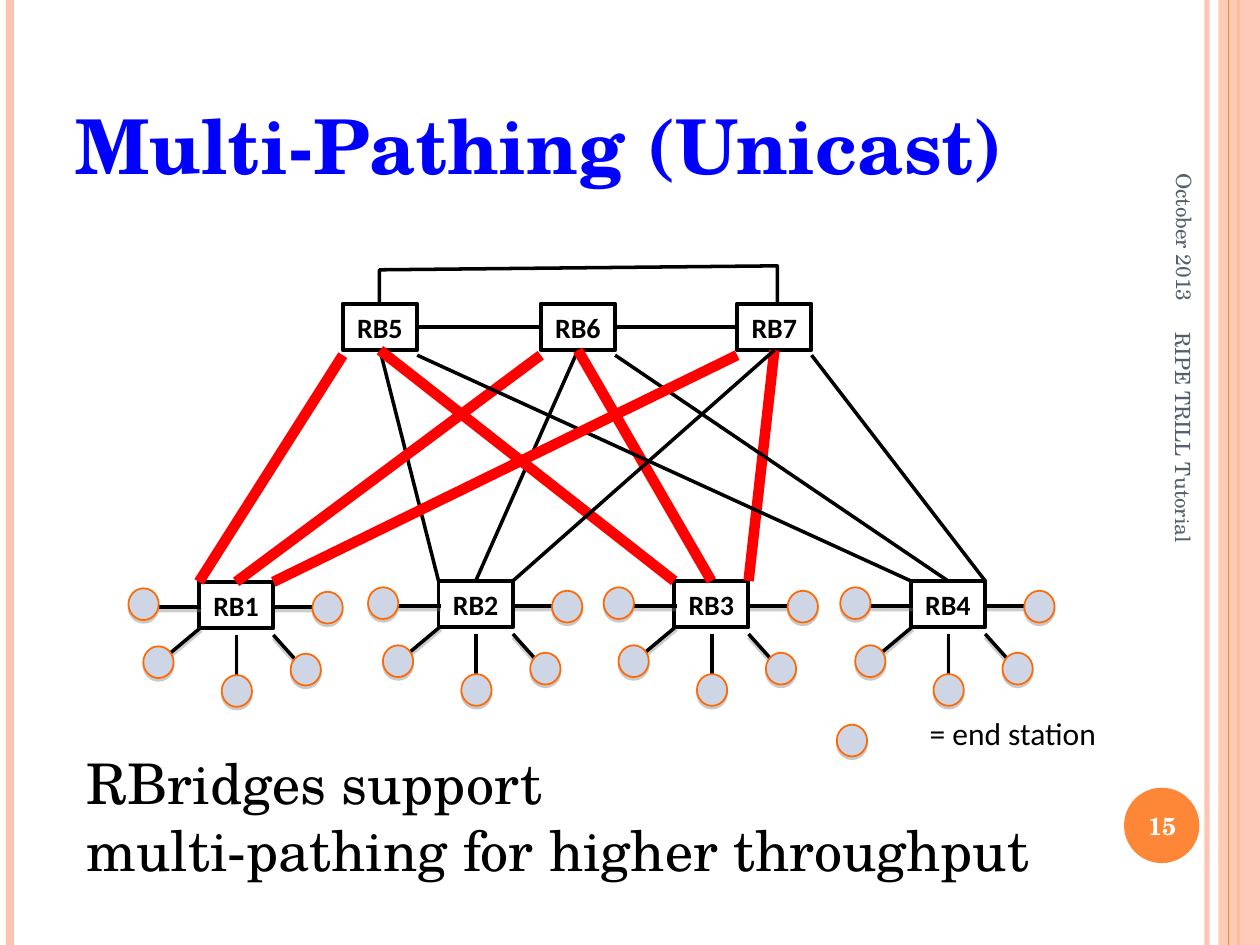
from dataclasses import dataclass

from lxml import etree
from pptx import Presentation
from pptx.dml.color import RGBColor
from pptx.enum.shapes import MSO_CONNECTOR, MSO_SHAPE
from pptx.enum.text import MSO_ANCHOR, PP_ALIGN
from pptx.oxml.ns import qn
from pptx.util import Cm, Pt

STRAIGHT = MSO_CONNECTOR.STRAIGHT
RECT, OVAL = MSO_SHAPE.RECTANGLE, MSO_SHAPE.OVAL
TOP, MIDDLE, BOTTOM = MSO_ANCHOR.TOP, MSO_ANCHOR.MIDDLE, MSO_ANCHOR.BOTTOM
LEFT, CENTER, RIGHT = PP_ALIGN.LEFT, PP_ALIGN.CENTER, PP_ALIGN.RIGHT


@dataclass(frozen=True)
class Theme:
    serif: str = "TeX Gyre Schola"
    sans: str = "Calibri"
    title: str = "0000FF"
    ink: str = "000000"
    paper: str = "FFFFFF"
    muted: str = "575F6D"
    peach: str = "FEC3AE"
    orange: str = "FE8637"
    hot: str = "FF0000"
    station: str = "CED6E6"
    station_edge: str = "FF6903"
    shadow: str = "808080"
    title_size: float = 43.2
    body_size: float = 32
    legend_size: float = 18
    node_size: float = 16
    page_size: float = 14
    small_size: float = 12


# Lengths are in centimetres
SLIDE_W, SLIDE_H = 25.4, 19.05
BOX_W, BOX_H = 1.5, 0.94
STATION_W, STATION_H = 0.61, 0.64
CORNER_GAP = 0.1

UPPER = {"RB5": (6.91, 6.12), "RB6": (10.9, 6.12), "RB7": (14.86, 6.12)}
LOWER = {"RB1": (4.01, 11.73), "RB2": (8.84, 11.71),
         "RB3": (13.59, 11.71), "RB4": (18.36, 11.71)}

# Offsets from a bridge's corner: station, spoke start, spoke end
LEAVES = [
    ((2.29, 0.2), (2.29, 0.51), (1.42, 0.51)),
    ((0.46, 1.88), (0.76, 1.93), (0.76, 1.07)),
    ((-1.12, 1.3), (0.05, 0.91), (-0.81, 1.63)),
    ((1.85, 1.45), (1.93, 1.55), (1.5, 1.07)),
    ((-1.42, 0.13), (0.05, 0.51), (-0.81, 0.51)),
]

# Upper bridge and its end, lower bridge and its end, on a multi-path route;
# an end is 0 (left corner), 0.5 (middle) or 1 (right corner)
LINKS = [
    ("RB5", 0, "RB1", 0, True),
    ("RB5", 0.5, "RB2", 0, False),
    ("RB7", 1, "RB4", 1, False),
    ("RB7", 0.5, "RB3", 1, True),
    ("RB6", 0, "RB1", 0.5, True),
    ("RB6", 0.5, "RB2", 0.5, False),
    ("RB6", 0.5, "RB3", 0.5, True),
    ("RB5", 0.5, "RB3", 0, True),
    ("RB7", 0.5, "RB2", 1, False),
    ("RB5", 1, "RB4", 0, False),
    ("RB6", 1, "RB4", 0.5, False),
    ("RB7", 0, "RB1", 1, True),
]


class SlideBuilder:
    def __init__(self, slide, theme):
        self.s, self.t = slide, theme

    @staticmethod
    def effects(sp, shadow=None, alpha=40, dist=2):
        """Replace the theme's shadow with none, or with one straight below."""
        spPr = sp._element.spPr
        for old in spPr.findall(qn("a:effectLst")):
            spPr.remove(old)
        effects = etree.SubElement(spPr, qn("a:effectLst"))
        if shadow:
            outer = etree.SubElement(effects, qn("a:outerShdw"), blurRad="0",
                                     dist=str(int(Pt(dist))), dir="5400000", rotWithShape="0")
            color = etree.SubElement(outer, qn("a:srgbClr"), val=shadow)
            etree.SubElement(color, qn("a:alpha"), val=str(alpha * 1000))

    @staticmethod
    def fade(sp, percent):
        color = next(sp._element.spPr.iter(qn("a:srgbClr")))
        etree.SubElement(color, qn("a:alpha"), val=str(percent * 1000))

    def label(self, sp, text, size, color, font, bold=False, align=LEFT, anchor=TOP, wrap=True):
        tf = sp.text_frame
        tf.word_wrap, tf.vertical_anchor = wrap, anchor
        p = tf.paragraphs[0]
        p.text, p.alignment = text, align
        p.font.size, p.font.name, p.font.bold = Pt(size), font, bold
        p.font.color.rgb = RGBColor.from_string(color)

    def text(self, x, y, w, h, text, size, color, font, rotation=0, **style):
        sp = self.s.shapes.add_textbox(Cm(x), Cm(y), Cm(w), Cm(h))
        sp.rotation = rotation
        self.label(sp, text, size, color, font, **style)

    def line(self, start, end, color, width, shadow=False):
        sp = self.s.shapes.add_connector(STRAIGHT, *map(Cm, start + end))
        sp.line.color.rgb = RGBColor.from_string(color)
        sp.line.width = Pt(width)
        self.effects(sp, self.t.shadow if shadow else None)
        return sp

    def shape(self, kind, x, y, w, h, fill, edge=None, width=1):
        sp = self.s.shapes.add_shape(kind, Cm(x), Cm(y), Cm(w), Cm(h))
        sp.shadow.inherit = False
        sp.fill.solid()
        sp.fill.fore_color.rgb = RGBColor.from_string(fill)
        if edge:
            sp.line.color.rgb = RGBColor.from_string(edge)
            sp.line.width = Pt(width)
        else:
            sp.line.fill.background()
        return sp

    def station(self, x, y):
        sp = self.shape(OVAL, x, y, STATION_W, STATION_H, self.t.station, self.t.station_edge)
        self.effects(sp, self.t.shadow, 42, 1.6)

    def bridge(self, name, x, y):
        sp = self.shape(RECT, x, y, BOX_W, BOX_H, self.t.paper, self.t.ink, 2.25)
        self.label(sp, name, self.t.node_size, self.t.ink, self.t.sans, bold=True,
                   align=CENTER, anchor=MIDDLE, wrap=False)
        return sp

    def edge_bridge(self, name, x, y):
        """A bridge with its ring of end stations."""
        for i, (station, start, end) in enumerate(LEAVES):
            if i == len(LEAVES) - 1:
                box = self.bridge(name, x, y)
            self.line((x + start[0], y + start[1]), (x + end[0], y + end[1]),
                      self.t.ink, 2, shadow=True)
            self.station(x + station[0], y + station[1])
        return box

    def polyline(self, points, color, width):
        first, *rest = [(Cm(x), Cm(y)) for x, y in points]
        builder = self.s.shapes.build_freeform(*first, scale=1.0)
        builder.add_line_segments(rest, close=False)
        sp = builder.convert_to_shape()
        sp.shadow.inherit = False
        sp.fill.background()
        sp.line.color.rgb = RGBColor.from_string(color)
        sp.line.width = Pt(width)


def main():
    prs = Presentation()
    prs.slide_width, prs.slide_height = Cm(SLIDE_W), Cm(SLIDE_H)
    t = Theme()
    b = SlideBuilder(prs.slides.add_slide(prs.slide_layouts[6]), t)

    # Side stripes and page badge
    def stripe(x, color, width):
        return b.line((x, 0), (x, SLIDE_H), color, width)

    b.fade(stripe(24.33, t.peach, 3), 93)
    stripe(0.2, t.peach, 4.5)
    stripe(24.97, t.orange, 1.5)
    b.fade(b.shape(RECT, 24.56, 0, 0.84, SLIDE_H, t.peach), 87)
    stripe(24.77, t.orange, 0.75)
    b.shape(OVAL, 22.66, 15.88, 1.52, 1.52, t.orange)

    # Title, body and footers
    b.text(1.27, 0.76, 20.75, 3.18, "Multi-Pathing (Unicast)", t.title_size, t.title, t.serif,
           bold=True, anchor=BOTTOM)
    b.text(21.08, 3, 5.59, 1.07, "October 2013", t.small_size, t.muted, t.serif,
           rotation=90, align=RIGHT, anchor=MIDDLE)
    b.text(22.58, 15.93, 1.7, 1.45, "15", t.page_size, t.paper, t.serif,
           bold=True, align=CENTER, anchor=MIDDLE)
    b.text(1.5, 14.96, 22.33, 3, "RBridges support\nmulti-pathing for higher throughput",
           t.body_size, t.ink, t.serif)
    b.text(19.41, 10.39, 8.89, 1.02, "RIPE TRILL Tutorial", t.small_size, t.muted, t.serif,
           rotation=90, anchor=MIDDLE)

    # Bridges
    boxes = {name: b.edge_bridge(name, *at) for name, at in LOWER.items()}
    boxes.update({name: b.bridge(name, *at) for name, at in UPPER.items()})

    # Links between the two rows
    for upper, u_end, lower, l_end, hot in LINKS:
        (ux, uy), (lx, ly) = UPPER[upper], LOWER[lower]
        start = (ux + u_end * BOX_W, uy + BOX_H + CORNER_GAP)
        cxn = b.line(start, (lx + l_end * BOX_W, ly), t.hot if hot else t.ink, 6 if hot else 2)
        if u_end == 0.5:
            cxn.begin_connect(boxes[upper], 2)
        if l_end == 0.5:
            cxn.end_connect(boxes[lower], 0)

    # Links along the upper row
    for left, right in (("RB5", "RB6"), ("RB6", "RB7")):
        cxn = b.line(UPPER[left], UPPER[right], t.ink, 2)
        cxn.begin_connect(boxes[left], 3)
        cxn.end_connect(boxes[right], 1)
    b.polyline([(7.65, 6.12), (7.65, 5.44), (15.67, 5.36), (15.67, 6.1)], t.ink, 2)

    # Legend
    b.station(16.87, 14.61)
    b.text(18.49, 14.27, 5.51, 1.02, "= end station", t.legend_size, t.ink, t.sans)

    prs.save("out.pptx")


if __name__ == "__main__":
    main()
